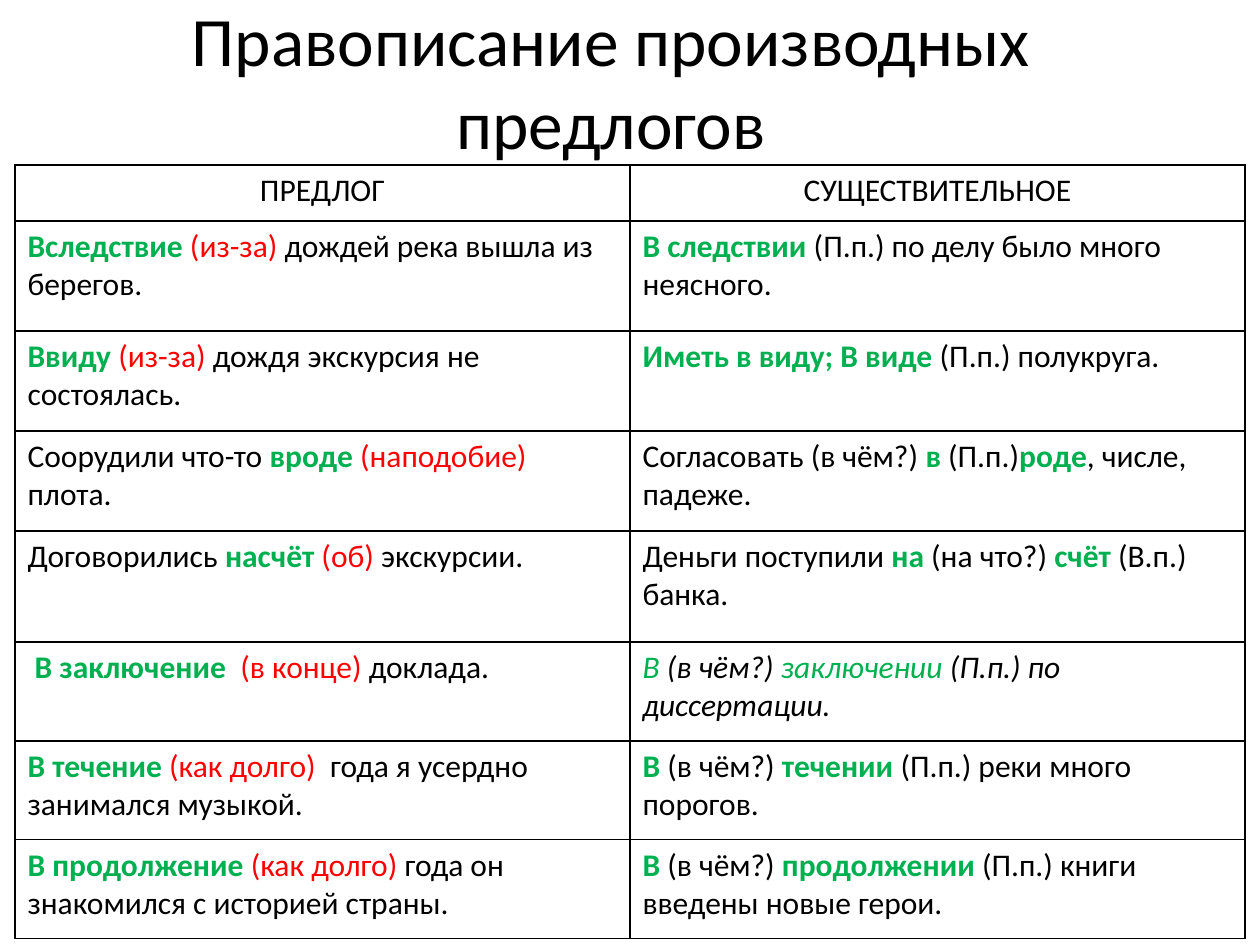
from dataclasses import dataclass

from lxml import etree
from pptx import Presentation
from pptx.dml.color import RGBColor
from pptx.enum.text import MSO_ANCHOR, MSO_AUTO_SIZE, PP_ALIGN
from pptx.oxml.ns import qn
from pptx.util import Pt

CENTER, LEFT = PP_ALIGN.CENTER, PP_ALIGN.LEFT
MIDDLE, TOP = MSO_ANCHOR.MIDDLE, MSO_ANCHOR.TOP
NO_AUTOFIT = MSO_AUTO_SIZE.NONE
TITLE_ONLY = 5
EMU_PER_PX = 914400 / 126


@dataclass(frozen=True)
class Theme:
    font: str = "Calibri"
    title_size: float = 39.6
    body_size: float = 18
    text: str = "000000"
    term: str = "00B050"
    synonym: str = "FF0000"
    border: str = "000000"
    border_width: float = 1


THEME = Theme()

# Run style: colour, bold, italic
PLAIN = (THEME.text, False, False)
TERM = (THEME.term, True, False)
SYNONYM = (THEME.synonym, False, False)
ITALIC = (THEME.text, False, True)
ITALIC_TERM = (THEME.term, False, True)

TITLE = "Правописание производных предлогов"
HEADERS = ("ПРЕДЛОГ", "СУЩЕСТВИТЕЛЬНОЕ")
ROW_HEIGHTS = (56, 110, 100, 100, 111, 99, 99, 99)

# Each row: preposition example, noun example
EXAMPLES = [
    ([("Вследствие ", TERM), ("(из-за)", SYNONYM), (" дождей река вышла из берегов.", PLAIN)],
     [("В следствии ", TERM), ("(П.п.) по делу было много неясного.", PLAIN)]),
    ([("Ввиду ", TERM), ("(из-за) ", SYNONYM), ("дождя экскурсия не состоялась.", PLAIN)],
     [("Иметь в виду; В виде ", TERM), ("(П.п.) полукруга.", PLAIN)]),
    ([("Соорудили что-то ", PLAIN), ("вроде ", TERM), ("(наподобие) ", SYNONYM), ("плота.", PLAIN)],
     [("Согласовать (в чём?) ", PLAIN), ("в", TERM), (" (П.п.)", PLAIN), ("роде", TERM),
      (", числе, падеже.", PLAIN)]),
    ([("Договорились ", PLAIN), ("насчёт ", TERM), ("(об) ", SYNONYM), ("экскурсии.", PLAIN)],
     [("Деньги поступили ", PLAIN), ("на", TERM), (" (на что?) ", PLAIN), ("счёт ", TERM),
      ("(В.п.) банка.", PLAIN)]),
    ([(" ", ITALIC), ("В заключение  ", TERM), ("(в конце) ", SYNONYM), ("доклада.", PLAIN)],
     [("В", ITALIC_TERM), (" (в чём?) ", ITALIC), ("заключении ", ITALIC_TERM),
      ("(П.п.) по диссертации.", ITALIC)]),
    ([("В течение ", TERM), ("(как долго)  ", SYNONYM), ("года я усердно занимался музыкой.", PLAIN)],
     [("В ", TERM), ("(в чём?) ", PLAIN), ("течении ", TERM), ("(П.п.) реки много порогов.", PLAIN)]),
    ([("В продолжение ", TERM), ("(как долго) ", SYNONYM),
      ("года он знакомился с историей страны.", PLAIN)],
     [("В ", TERM), ("(в чём?) ", PLAIN), ("продолжении", TERM),
      (" (П.п.) книги введены новые герои.", PLAIN)]),
]


def px(length):
    return round(length * EMU_PER_PX)


def format_run(run, size, style):
    color, bold, italic = style
    run.font.name = THEME.font
    run.font.size = Pt(size)
    run.font.bold = bold
    run.font.italic = italic
    run.font.color.rgb = RGBColor.from_string(color)


def set_borders(cell):
    properties = cell._tc.get_or_add_tcPr()
    for index, side in enumerate(("lnL", "lnR", "lnT", "lnB")):
        line = etree.Element(qn(f"a:{side}"), w=str(Pt(THEME.border_width)))
        fill = etree.SubElement(line, qn("a:solidFill"))
        etree.SubElement(fill, qn("a:srgbClr"), val=THEME.border)
        properties.insert(index, line)


def fill_cell(cell, segments, alignment):
    cell.fill.background()
    cell.vertical_anchor = TOP
    set_borders(cell)
    paragraph = cell.text_frame.paragraphs[0]
    paragraph.alignment = alignment
    for text, style in segments:
        run = paragraph.add_run()
        run.text = text
        format_run(run, THEME.body_size, style)


def place_title(slide, left, top, width, height):
    title = slide.shapes.title
    title.left, title.top = px(left), px(top)
    title.width, title.height = px(width), px(height)
    frame = title.text_frame
    frame.text = TITLE
    frame.word_wrap = True
    frame.auto_size = NO_AUTOFIT
    frame.vertical_anchor = MIDDLE
    paragraph = frame.paragraphs[0]
    paragraph.alignment = CENTER
    format_run(paragraph.runs[0], THEME.title_size, PLAIN)


def place_table(slide, left, top, width):
    table = slide.shapes.add_table(
        len(ROW_HEIGHTS), len(HEADERS), px(left), px(top), px(width), px(sum(ROW_HEIGHTS))
    ).table
    table.first_row = table.horz_banding = False
    for column in table.columns:
        column.width = px(width / len(HEADERS))
    for row, height in zip(table.rows, ROW_HEIGHTS):
        row.height = px(height)

    # Header row, then the paired examples
    for column, header in enumerate(HEADERS):
        fill_cell(table.cell(0, column), [(header, PLAIN)], CENTER)
    for row, pair in enumerate(EXAMPLES, start=1):
        for column, segments in enumerate(pair):
            fill_cell(table.cell(row, column), segments, LEFT)


def main():
    presentation = Presentation()
    presentation.slide_width, presentation.slide_height = px(1260), px(945)
    slide = presentation.slides.add_slide(presentation.slide_layouts[TITLE_ONLY])
    place_title(slide, 25, 6, 1172, 149)
    place_table(slide, 15, 165, 1230)
    presentation.save("out.pptx")


if __name__ == "__main__":
    main()
